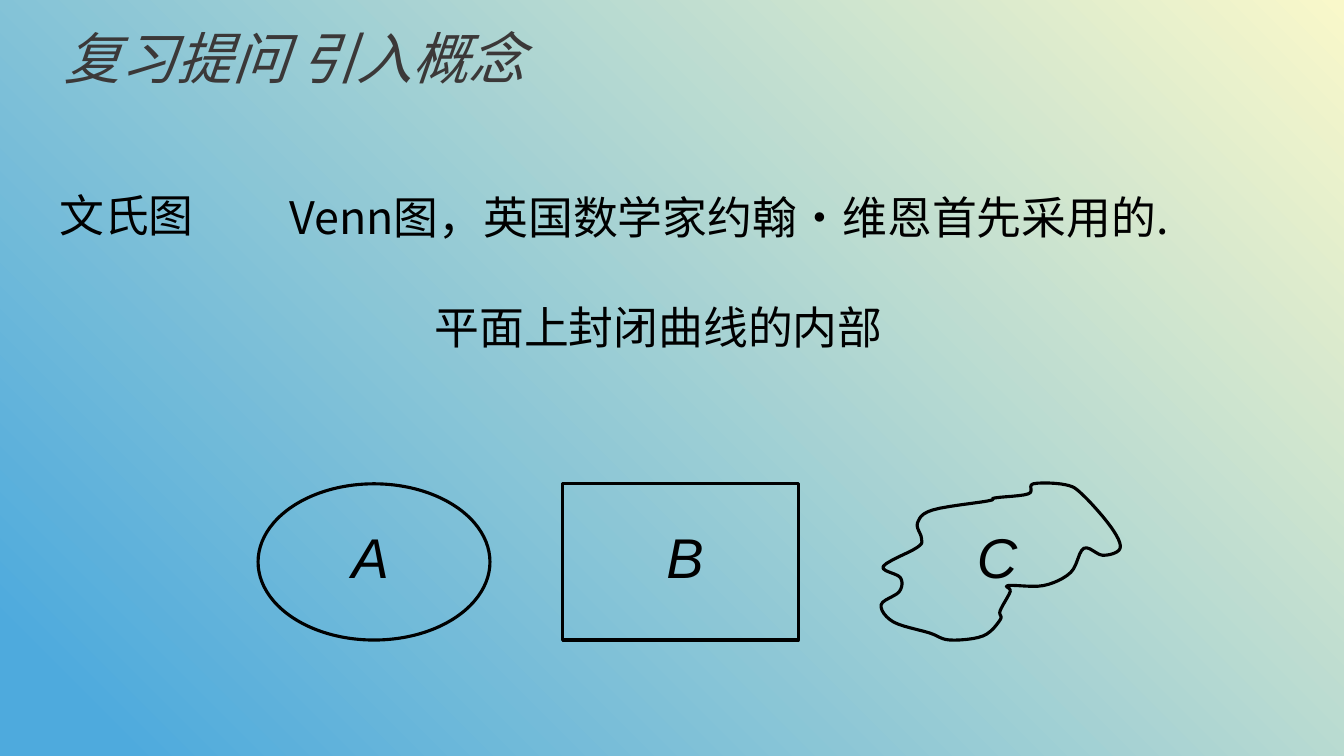
from dataclasses import dataclass

from lxml.etree import SubElement
from pptx import Presentation
from pptx.dml.color import RGBColor
from pptx.enum.shapes import MSO_SHAPE
from pptx.enum.text import MSO_ANCHOR, PP_ALIGN
from pptx.oxml.ns import qn
from pptx.shapes.autoshape import Shape
from pptx.slide import Slide
from pptx.text.text import TextFrame
from pptx.util import Pt

PX = 9144  # EMU per px, 100 px to the inch
Point = tuple[float, float]


@dataclass(frozen=True)
class Theme:
    black: RGBColor = RGBColor.from_string("000000")
    title: RGBColor = RGBColor.from_string("3B3838")
    blue: RGBColor = RGBColor.from_string("4EAADD")
    cream: RGBColor = RGBColor.from_string("F9F8CA")
    chinese_font: str = "Noto Sans CJK SC"
    letter_font: str = "Arial"
    large: Pt = Pt(40)
    body: Pt = Pt(32)
    outline: Pt = Pt(2.25)


THEME = Theme()


@dataclass(frozen=True)
class Box:
    left: int
    top: int
    width: int
    height: int

    def emu(self) -> tuple[int, int, int, int]:
        return self.left * PX, self.top * PX, self.width * PX, self.height * PX


@dataclass(frozen=True)
class Label:
    text: str
    box: Box
    font: str = THEME.chinese_font
    size: Pt = THEME.body
    italic: bool = False


@dataclass(frozen=True)
class Outline:
    kind: MSO_SHAPE
    box: Box


TITLE_BOX = Box(-9, 6, 602, 102)
OUTLINES = [
    Outline(MSO_SHAPE.OVAL, Box(256, 480, 230, 155)),
    Outline(MSO_SHAPE.RECTANGLE, Box(558, 480, 234, 155)),
]
LABELS = [
    *(Label(letter, Box(left, 513, 115, 77), THEME.letter_font, THEME.large, True)
      for letter, left in (("A", 339), ("B", 651), ("C", 959))),
    Label("文氏图", Box(49, 181, 265, 63)),
    Label("平面上封闭曲线的内部", Box(421, 292, 608, 63)),
    Label("Venn图，英国数学家约翰·维恩首先采用的.", Box(277, 183, 897, 64)),
]
CURVE_KNOTS: list[Point] = [
    (980, 497), (925, 506), (910, 519), (914, 534), (910, 543), (876, 562),
    (893, 573), (892, 587), (874, 600), (886, 617), (922, 628), (942, 635),
    (975, 631), (992, 615), (992, 606), (1002, 587), (1000, 581), (1035, 581),
    (1062, 568), (1075, 544), (1094, 551), (1111, 544), (1102, 523),
    (1074, 491), (1057, 481), (1025, 480), (1020, 490), (987, 494),
]
CURVE_STEPS = 6


def paint_background(slide: Slide) -> None:
    fill = slide.background.fill
    fill.gradient()
    fill.gradient_angle = 45
    stops = ((0.06, THEME.blue), (1.0, THEME.cream))
    for stop, (position, color) in zip(fill.gradient_stops, stops):
        stop.position = position
        stop.color.rgb = color


def write(frame: TextFrame, text: str, font_name: str, size: Pt,
          color: RGBColor, italic: bool) -> None:
    """Fill the frame with one paragraph, naming the font for Chinese text too."""
    frame.text = text
    paragraph = frame.paragraphs[0]
    font = paragraph.font
    font.name, font.size, font.italic = font_name, size, italic
    font.color.rgb = color
    properties = paragraph._p.pPr.find(qn("a:defRPr"))
    SubElement(properties, qn("a:ea"), typeface=font_name)


def add_title(slide: Slide) -> None:
    title = slide.shapes.title
    title.left, title.top, title.width, title.height = TITLE_BOX.emu()
    frame = title.text_frame
    write(frame, "复习提问 引入概念", THEME.chinese_font, THEME.large, THEME.title, True)
    frame.word_wrap = False
    frame.vertical_anchor = MSO_ANCHOR.MIDDLE
    frame.paragraphs[0].alignment = PP_ALIGN.CENTER


def style_outline(shape: Shape) -> None:
    shape.shadow.inherit = False
    shape.fill.background()
    shape.line.color.rgb = THEME.black
    shape.line.width = THEME.outline


def smooth(knots: list[Point], steps: int) -> list[Point]:
    """Sample a closed Catmull-Rom curve through the knots."""
    points = []
    for index, end in enumerate(knots):
        before, start = knots[index - 2], knots[index - 1]
        after = knots[(index + 1) % len(knots)]
        for step in range(steps):
            t = step / steps
            points.append(tuple(
                b + t / 2 * (c - a + t * (2 * a - 5 * b + 4 * c - d
                                          + t * (3 * (b - c) + d - a)))
                for a, b, c, d in zip(before, start, end, after)))
    return points


def add_closed_curve(slide: Slide) -> None:
    first, *rest = smooth(CURVE_KNOTS, CURVE_STEPS)
    emu_points = [(round(x * PX), round(y * PX)) for x, y in rest]
    builder = slide.shapes.build_freeform(*(round(value * PX) for value in first))
    builder.add_line_segments(emu_points, close=True)
    style_outline(builder.convert_to_shape())


def add_label(slide: Slide, label: Label) -> None:
    frame = slide.shapes.add_textbox(*label.box.emu()).text_frame
    frame.word_wrap = True
    write(frame, label.text, label.font, label.size, THEME.black, label.italic)


def main() -> None:
    presentation = Presentation()
    presentation.slide_width, presentation.slide_height = 1333 * PX, 750 * PX
    slide = presentation.slides.add_slide(presentation.slide_layouts[5])
    paint_background(slide)
    add_title(slide)
    for outline in OUTLINES:
        style_outline(slide.shapes.add_shape(outline.kind, *outline.box.emu()))
    add_closed_curve(slide)
    for label in LABELS:
        add_label(slide, label)
    presentation.save("out.pptx")


if __name__ == "__main__":
    main()
